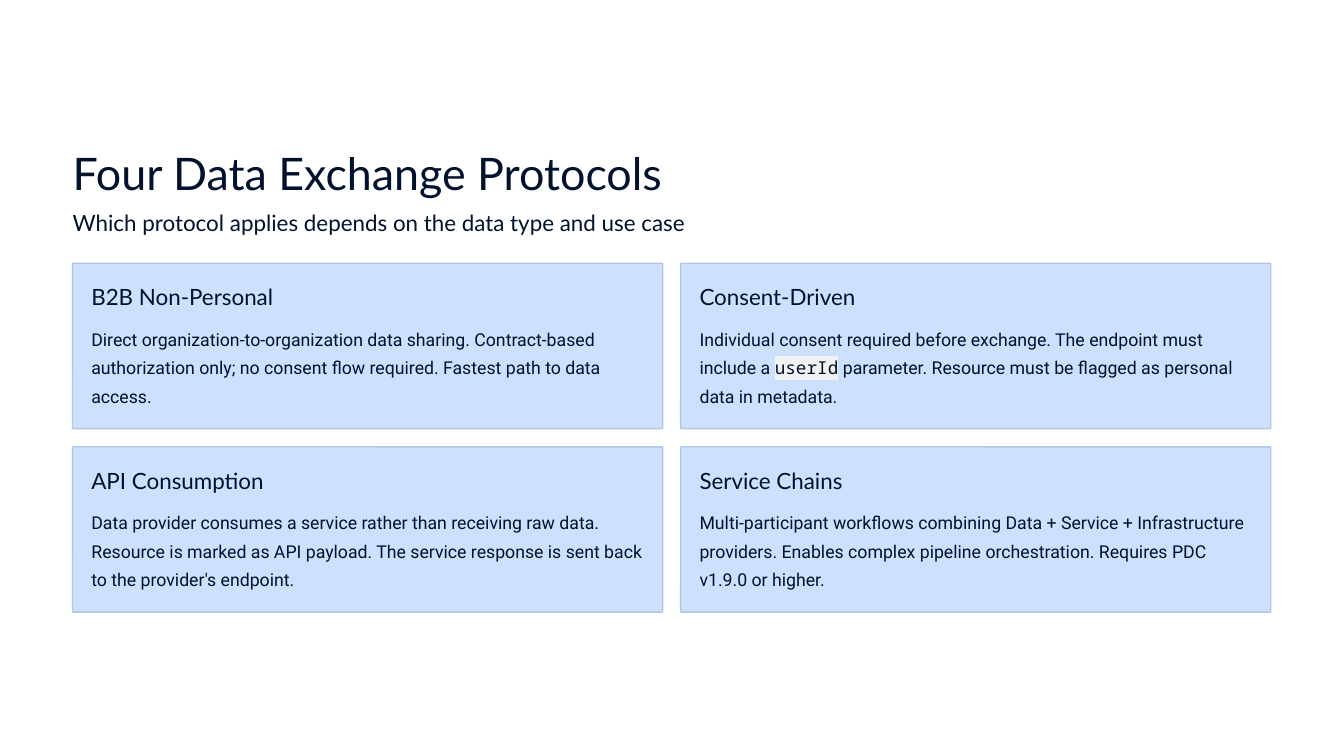
from lxml import etree
from pptx import Presentation
from pptx import util as u
from pptx.dml.color import RGBColor
from pptx.enum import shapes, text
from pptx.oxml import ns

TITLE = "Four Data Exchange Protocols"
SUBTITLE = "Which protocol applies depends on the data type and use case"
CARDS = [
    ("B2B Non-Personal", [
        "Direct organization-to-organization data sharing. Contract-based "
        "authorization only; no consent flow required. Fastest path to data access."]),
    ("Consent-Driven", [
        "Individual consent required before exchange. The endpoint must include a ",
        ("userId",),
        " parameter. Resource must be flagged as personal data in metadata."]),
    ("API Consumption", [
        "Data provider consumes a service rather than receiving raw data. "
        "Resource is marked as API payload. The service response is sent back "
        "to the provider's endpoint."]),
    ("Service Chains", [
        "Multi-participant workflows combining Data + Service + Infrastructure "
        "providers. Enables complex pipeline orchestration. Requires PDC "
        "v1.9.0 or higher."]),
]
COLORS = {"page": "FFFFFF", "ink": "01122E", "card": "CDE0FE",
          "border": "B3C6E4", "code": "F2F2F2"}
HEADING_FONT, BODY_FONT, CODE_FONT = "Lato", "Roboto", "Noto Sans Mono"

PX = 4572
WIDTH, HEIGHT = 2000, 1125
MARGIN, GRID_TOP = 108, 392
CARD_WIDTH, CARD_HEIGHT, GAP, PADDING = 878, 246, 27, 28
COLUMNS = 2
BODY_OFFSET = 87


def color(name):
    return RGBColor.from_string(COLORS[name])


def px(*lengths):
    return [u.Emu(length * PX) for length in lengths]


def highlight(run, name):
    mark = etree.SubElement(run.font._element, ns.qn("a:highlight"))
    etree.SubElement(mark, ns.qn("a:srgbClr"), val=COLORS[name])


def add_text(slide, box, parts, size, font, spacing, wrap=False):
    frame = slide.shapes.add_textbox(*px(*box)).text_frame
    frame.margin_left = frame.margin_right = frame.margin_top = frame.margin_bottom = 0
    frame.word_wrap = wrap
    frame.auto_size = text.MSO_AUTO_SIZE.NONE
    paragraph = frame.paragraphs[0]
    paragraph.line_spacing = spacing
    paragraph.font.size = u.Pt(size)
    paragraph.font.name = font
    paragraph.font.color.rgb = color("ink")
    for part in parts:
        run = paragraph.add_run()
        if isinstance(part, tuple):
            run.text = part[0]
            highlight(run, "code")
            run.font.name = CODE_FONT
        else:
            run.text = part


def add_card(slide, left, top, heading, body):
    card = slide.shapes.add_shape(shapes.MSO_SHAPE.ROUNDED_RECTANGLE,
                                  *px(left, top, CARD_WIDTH, CARD_HEIGHT))
    card.adjustments[0] = 0.005
    card.shadow.inherit = False
    card.fill.solid()
    card.fill.fore_color.rgb = color("card")
    card.line.color.rgb = color("border")
    card.line.width = u.Pt(0.75)
    inner_left, inner_width = left + PADDING, CARD_WIDTH - 2 * PADDING
    add_text(slide, (inner_left, top + PADDING, 340, 42), [heading], 12, HEADING_FONT, 1.04)
    add_text(slide, (inner_left, top + BODY_OFFSET, inner_width, 131), body,
             9.5, BODY_FONT, 1.33, wrap=True)


def main():
    presentation = Presentation()
    presentation.slide_width, presentation.slide_height = px(WIDTH, HEIGHT)
    slide = presentation.slides.add_slide(presentation.slide_layouts[6])
    slide.background.fill.solid()
    slide.background.fill.fore_color.rgb = color("page")

    add_text(slide, (MARGIN, 214, 1060, 84), [TITLE], 24, HEADING_FONT, 1.04)
    add_text(slide, (MARGIN, 310, 1096, 42), [SUBTITLE], 12, HEADING_FONT, 1.04)
    for index, (heading, body) in enumerate(CARDS):
        row, column = divmod(index, COLUMNS)
        add_card(slide, MARGIN + column * (CARD_WIDTH + GAP),
                 GRID_TOP + row * (CARD_HEIGHT + GAP), heading, body)

    presentation.save("out.pptx")


if __name__ == "__main__":
    main()
